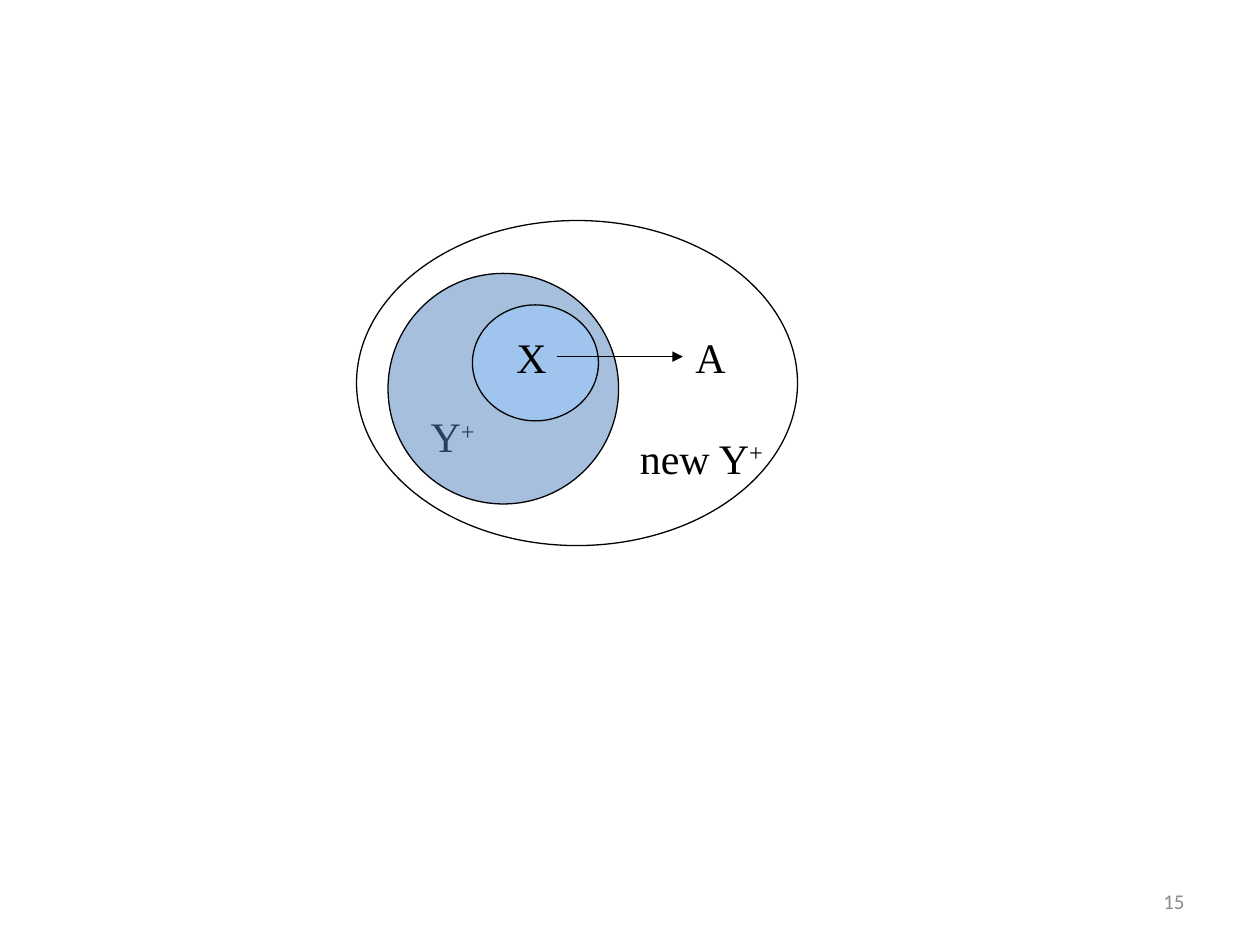
from lxml import etree
from pptx import Presentation
from pptx.dml.color import RGBColor
from pptx.enum.shapes import MSO_CONNECTOR, MSO_SHAPE
from pptx.enum.text import MSO_ANCHOR, MSO_AUTO_SIZE, PP_ALIGN
from pptx.oxml.ns import qn
from pptx.util import Inches, Pt

OVAL = MSO_SHAPE.OVAL
STRAIGHT = MSO_CONNECTOR.STRAIGHT
MIDDLE, TOP = MSO_ANCHOR.MIDDLE, MSO_ANCHOR.TOP
LEFT, RIGHT = PP_ALIGN.LEFT, PP_ALIGN.RIGHT
GROW, FIXED = MSO_AUTO_SIZE.SHAPE_TO_FIT_TEXT, MSO_AUTO_SIZE.NONE

THEME = {
    "ink": "000000", "muted": "8C8C8C", "closure": "4F81BD", "key": "99CCFF",
    "label_font": "Times New Roman", "number_font": "Calibri",
    "label_size": 24, "number_size": 12, "line": 0.75, "opacity": 50,
}

PAGE_NUMBER = ("15", (7.17, 6.95, 2.33, 0.4))
DIAGRAM = [
    ("label", (3.32, 3.21, 0.57, 0.5), "Y", "+"),
    ("set", (3.08, 2.17, 1.83, 1.83), "closure"),
    ("label", (4.98, 3.38, 1.21, 0.5), "new Y", "+"),
    ("set", (2.83, 1.75, 3.5, 2.58), None),
    ("set", (3.75, 2.42, 1, 0.92), "key"),
    ("label", (4, 2.58, 0.44, 0.5), "X", ""),
    ("label", (5.42, 2.58, 0.44, 0.5), "A", ""),
    ("arrow", (4.42, 2.83, 5.42, 2.83)),
]


def color(name):
    return RGBColor.from_string(THEME[name])


def style_line(line):
    line.color.rgb = color("ink")
    line.width = Pt(THEME["line"])


def add_text(page, place, text, superscript="", font="label_font", size="label_size",
             ink="ink", align=LEFT, anchor=TOP, wrap=False, fit=GROW):
    box = page.shapes.add_textbox(*map(Inches, place))
    frame = box.text_frame
    frame.word_wrap, frame.auto_size, frame.vertical_anchor = wrap, fit, anchor
    para = frame.paragraphs[0]
    para.alignment = align
    for content, baseline in ((text, 0), (superscript, 30000)):
        if not content:
            continue
        span = para.add_run()
        span.text = content
        span.font.name = THEME[font]
        span.font.size = Pt(THEME[size])
        span.font.color.rgb = color(ink)
        if baseline:
            span._r.get_or_add_rPr().set("baseline", str(baseline))


def add_set(page, place, fill):
    oval = page.shapes.add_shape(OVAL, *map(Inches, place))
    oval.shadow.inherit = False
    style_line(oval.line)
    if fill is None:
        oval.fill.background()
        return
    oval.fill.solid()
    oval.fill.fore_color.rgb = color(fill)
    tint = oval._element.spPr.find(qn("a:solidFill"))[0]
    etree.SubElement(tint, qn("a:alpha")).set("val", str(THEME["opacity"] * 1000))


def add_arrow(page, ends):
    arrow = page.shapes.add_connector(STRAIGHT, *map(Inches, ends))
    style_line(arrow.line)
    etree.SubElement(arrow.line._get_or_add_ln(), qn("a:tailEnd")).set("type", "triangle")
    etree.SubElement(arrow._element.spPr, qn("a:effectLst"))


def main():
    deck = Presentation()
    deck.slide_width, deck.slide_height = Inches(10), Inches(7.5)
    page = deck.slides.add_slide(deck.slide_layouts[6])
    number, place = PAGE_NUMBER
    add_text(page, place, number, font="number_font", size="number_size", ink="muted",
             align=RIGHT, anchor=MIDDLE, wrap=True, fit=FIXED)
    builders = {"label": add_text, "set": add_set, "arrow": add_arrow}
    for kind, *details in DIAGRAM:
        builders[kind](page, *details)
    deck.save("out.pptx")


if __name__ == "__main__":
    main()
